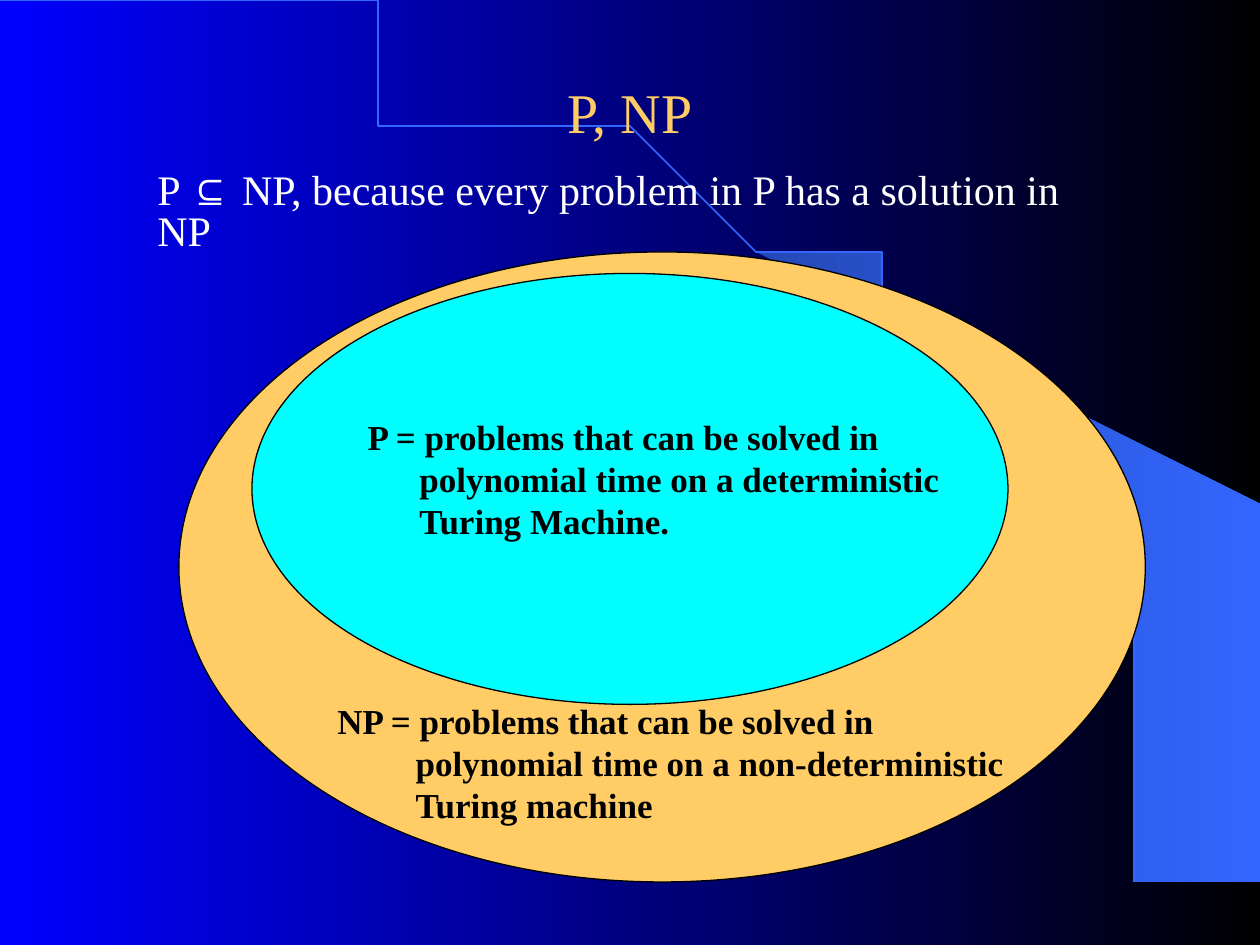
import math

import pptx
import pptx.dml.color
import pptx.enum.shapes
import pptx.enum.text
import pptx.util

Inches = pptx.util.Inches
Pt = pptx.util.Pt
RGBColor = pptx.dml.color.RGBColor
ANCHOR = pptx.enum.text.MSO_ANCHOR
ALIGN = pptx.enum.text.PP_ALIGN

# Content
TITLE = "P, NP"
STATEMENT = "P ⊆ NP, because every problem in P has a solution in NP"
P_LINES = [
    "P = problems that can be solved in",
    "polynomial time on a deterministic",
    "Turing Machine.",
]
NP_LINES = [
    "NP = problems that can be solved in",
    "polynomial time on a non-deterministic",
    "Turing machine",
]

# Style
FONT = "Times New Roman"
BLUE = RGBColor(0x00, 0x00, 0xFF)
BLACK = RGBColor(0x00, 0x00, 0x00)
WHITE = RGBColor(0xFF, 0xFF, 0xFF)
GOLD = RGBColor(0xFF, 0xCC, 0x66)
CYAN = RGBColor(0x00, 0xFF, 0xFF)
DEEP_BLUE = RGBColor(0x24, 0x49, 0xB6)
BRIGHT_BLUE = RGBColor(0x33, 0x66, 0xFF)

# Geometry in inches
ARC_WIDTH, ARC_HEIGHT, ARC_STEPS = 9.2, 7.49, 90
BEAM = [
    (9.2, 7.48), (9.99, 7.49), (9.99, 4.23), (5.89, 1.73), (6.24, 1.99),
    (6.53, 2.22), (6.85, 2.5), (7.16, 2.8), (7.62, 3.3), (8.03, 3.84),
    (8.32, 4.31), (8.58, 4.79), (8.78, 5.28), (8.93, 5.72), (9.03, 6.09),
    (9.13, 6.56), (9.17, 6.96),
]
SETS = [
    ((1.42, 2, 7.67, 5), GOLD),
    ((2, 2.17, 6, 3.42), CYAN),
]


def set_gradient(fill, start, end):
    fill.gradient()
    fill.gradient_angle = 0
    for stop, color in zip(fill.gradient_stops, (start, end)):
        stop.color.rgb = color


def add_outline(page, points, close):
    builder = page.shapes.build_freeform(*points[0], scale=Inches(1))
    builder.add_line_segments(points[1:], close=close)
    shape = builder.convert_to_shape()
    shape.shadow.inherit = False
    return shape


def write_text(box, lines, size, color, bold=False, align=ALIGN.LEFT,
               anchor=ANCHOR.TOP, wrap=True, indent=0, spacing=None, before=0):
    frame = box.text_frame
    frame.word_wrap = wrap
    frame.vertical_anchor = anchor
    for number, line in enumerate(lines):
        para = frame.add_paragraph() if number else frame.paragraphs[0]
        para.alignment = align
        para.space_before = Pt(before)
        if spacing:
            para.line_spacing = spacing
        if number and indent:
            para._p.get_or_add_pPr().set("marL", str(Inches(indent)))
        span = para.add_run()
        span.text = line
        span.font.name = FONT
        span.font.size = Pt(size)
        span.font.bold = bold
        span.font.color.rgb = color


def add_box(page, place):
    return page.shapes.add_textbox(*map(Inches, place))


def main():
    deck = pptx.Presentation()
    deck.slide_width, deck.slide_height = Inches(10), Inches(7.5)
    page = deck.slides.add_slide(deck.slide_layouts[5])
    set_gradient(page.background.fill, BLUE, BLACK)

    # Backdrop: light beam and quarter-ellipse arc
    beam = add_outline(page, BEAM, close=True)
    set_gradient(beam.fill, DEEP_BLUE, BRIGHT_BLUE)
    beam.line.fill.background()

    angles = [math.pi / 2 * step / ARC_STEPS for step in range(ARC_STEPS + 1)]
    arc_points = [(ARC_WIDTH * math.sin(angle), ARC_HEIGHT * (1 - math.cos(angle)))
                  for angle in angles]
    arc = add_outline(page, arc_points, close=False)
    arc.fill.background()
    arc.line.color.rgb = BRIGHT_BLUE
    arc.line.width = Pt(1)

    # Nested sets
    for place, color in SETS:
        oval = page.shapes.add_shape(pptx.enum.shapes.MSO_SHAPE.OVAL,
                                     *map(Inches, place))
        oval.shadow.inherit = False
        oval.fill.solid()
        oval.fill.fore_color.rgb = color
        oval.line.color.rgb = BLACK
        oval.line.width = Pt(0.75)

    # Title, brought in front of the arc
    title = page.shapes.title
    title.left, title.top = Inches(0.75), Inches(0.42)
    title.width, title.height = Inches(8.5), Inches(0.92)
    write_text(title, [TITLE], 32, GOLD, align=ALIGN.CENTER, anchor=ANCHOR.MIDDLE)
    page.shapes.element.append(title.element)

    # Set definitions and statement
    write_text(add_box(page, (2.82, 3.25, 4.85, 1.1)), P_LINES, 20, BLACK,
               bold=True, anchor=ANCHOR.MIDDLE, wrap=False, indent=0.41)
    write_text(add_box(page, (2.58, 5.5, 5.64, 1.1)), NP_LINES, 20, BLACK,
               bold=True, wrap=False, indent=0.62)
    statement = add_box(page, (1.15, 1.33, 7.85, 0.44))
    statement.text_frame.margin_right = Inches(0.4)
    write_text(statement, [STATEMENT], 24, WHITE, spacing=0.8, before=4.8)

    deck.save("out.pptx")


if __name__ == "__main__":
    main()
